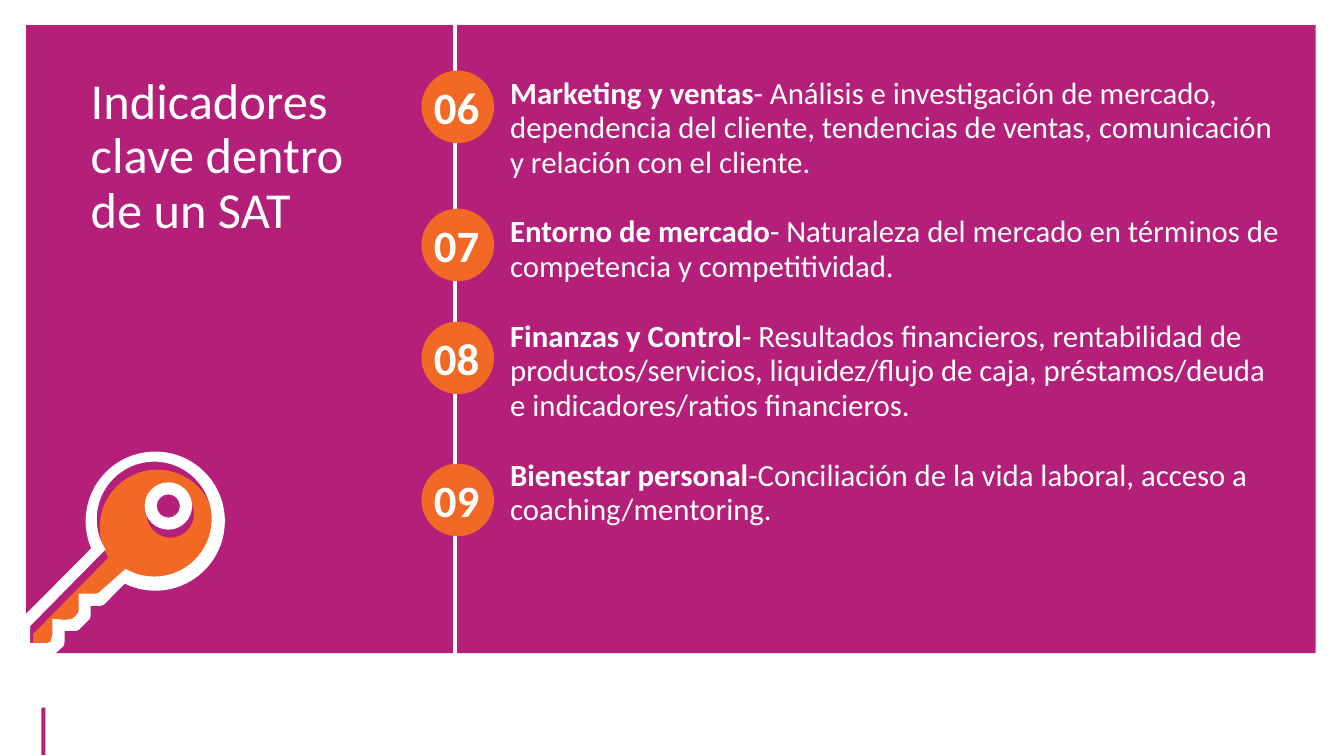
import math
from itertools import pairwise

from lxml import etree
from pptx import Presentation
from pptx import util as u
from pptx.dml import color
from pptx.enum import shapes, text
from pptx.oxml import ns

PX = 9144
FINE = 36
WHITE, MAGENTA, ORANGE = "FFFFFF", "B41F7A", "F16924"
FONT = "Calibri"

INDICATORS = [
    ("06", 70, "Marketing y ventas",
     "- Análisis e investigación de mercado, dependencia del cliente, "
     "tendencias de ventas, comunicación y relación con el cliente."),
    ("07", 207, "Entorno de mercado",
     "- Naturaleza del mercado en términos de competencia y competitividad."),
    ("08", 319, "Finanzas y Control",
     "- Resultados financieros, rentabilidad de productos/servicios, "
     "liquidez/flujo de caja, préstamos/deuda e indicadores/ratios financieros."),
    ("09", 460, "Bienestar personal",
     "-Conciliación de la vida laboral, acceso a coaching/mentoring."),
]


def px(n):
    return u.Emu(n * PX)


def rgb(value):
    return color.RGBColor.from_string(value)


def paint(sp, fill):
    sp.shadow.inherit = False
    sp.fill.solid()
    sp.fill.fore_color.rgb = rgb(fill)
    sp.line.fill.background()
    return sp


def add_preset(s, kind, x, y, w, h, fill):
    return paint(s.shapes.add_shape(kind, px(x), px(y), px(w), px(h)), fill)


def polar(cx, cy, radius, degrees):
    a = math.radians(degrees)
    return cx + radius * math.cos(a), cy + radius * math.sin(a)


def arc(cx, cy, radius, start=0, end=360):
    stops = [start, *(q for q in range(0, 540, 90) if start < q < end), end]
    nodes = [polar(cx, cy, radius, start)]
    for a, b in pairwise(stops):
        reach = radius * math.hypot(1, 4 / 3 * math.tan(math.radians(b - a) / 4))
        lean = math.degrees(math.acos(radius / reach))
        nodes.append((*polar(cx, cy, reach, a + lean),
                      *polar(cx, cy, reach, b - lean),
                      *polar(cx, cy, radius, b)))
    return nodes


def add_outline(s, fill, *contours):
    scaled = [[tuple(v * FINE for v in node) for node in c] for c in contours]
    ends = [[node[-2:] for node in c] for c in scaled]
    builder = s.shapes.build_freeform(*ends[0][0], scale=PX / FINE)
    builder.add_line_segments(ends[0][1:], close=True)
    for contour in ends[1:]:
        builder.move_to(*contour[0])
        builder.add_line_segments(contour[1:], close=True)
    sp = paint(builder.convert_to_shape(), fill)
    left = min(x for c in ends for x, _ in c)
    top = min(y for c in ends for _, y in c)
    segments = list(sp._element.iter(ns.qn("a:lnTo")))
    nodes = [node for c in scaled for node in c[1:]]
    for segment, node in zip(segments, nodes):
        if len(node) == 6:
            curve = etree.Element(ns.qn("a:cubicBezTo"))
            for x, y in zip(node[::2], node[1::2]):
                etree.SubElement(curve, ns.qn("a:pt"),
                                 x=str(round(x - left)), y=str(round(y - top)))
            segment.getparent().replace(segment, curve)


def add_line(s, x1, y1, x2, y2, stroke, width):
    line = s.shapes.add_connector(
        shapes.MSO_CONNECTOR.STRAIGHT, px(x1), px(y1), px(x2), px(y2))
    line.line.color.rgb = rgb(stroke)
    line.line.width = u.Pt(width)
    etree.SubElement(line._element.spPr, ns.qn("a:effectLst"))


def add_run(p, content, size, bold=False, fill=WHITE):
    r = p.add_run()
    r.text = content
    r.font.name = FONT
    r.font.size = u.Pt(size)
    r.font.bold = bold
    r.font.color.rgb = rgb(fill)


def set_frame(tf, left=10):
    tf.margin_left, tf.margin_right = px(left), px(10)
    tf.margin_top = tf.margin_bottom = px(5)
    tf.vertical_anchor = text.MSO_ANCHOR.TOP
    tf.word_wrap = True
    tf.auto_size = text.MSO_AUTO_SIZE.NONE
    return tf


def add_frame(s, x, y, w, h, left=10):
    box = s.shapes.add_textbox(px(x), px(y), px(w), px(h))
    return set_frame(box.text_frame, left)


def add_title(s, content):
    title = s.shapes.title
    title.left, title.top, title.width, title.height = px(80), px(70), px(312), px(305)
    s.shapes._spTree.append(title._element)
    p = set_frame(title.text_frame).paragraphs[0]
    p.alignment = text.PP_ALIGN.LEFT
    p.line_spacing = 0.9
    add_run(p, content, size=36)


def add_descriptions(s):
    tf = add_frame(s, 451, 70, 828, 680, left=55)
    for i, (_, _, name, detail) in enumerate(INDICATORS):
        p = tf.add_paragraph() if i else tf.paragraphs[0]
        p.line_spacing = u.Pt(24.8)
        p.space_before = u.Pt(24.8 if i else 0)
        add_run(p, name, size=22, bold=True)
        add_run(p, detail, size=22)


def add_badge(s, number, y):
    add_preset(s, shapes.MSO_SHAPE.OVAL, 418, y, 72, 72, ORANGE)
    p = add_frame(s, 416, y + 4, 74, 64).paragraphs[0]
    p.alignment = text.PP_ALIGN.CENTER
    add_run(p, number, size=32, bold=True)


def add_key(s):
    border = [(19, 616), *arc(154, 517, 69, 157, 476), (103, 600), (100, 601),
              (90, 601), (90, 611), (89, 614), (78, 625), (75, 626), (64, 626),
              (64, 637), (63, 641), (53, 650), (19, 650)]
    blade = [(30, 638), (30, 621), *arc(153, 515, 57, 148, 480), (98, 588), (95, 589),
             (78, 589), (78, 606), (77, 609), (72, 614), (64, 615), (52, 614),
             (52, 630), (50, 637), (46, 638)]
    shifted = [tuple(v + (8 if i % 2 else 3) for i, v in enumerate(node))
               for node in blade]
    add_outline(s, ORANGE, shifted, arc(169, 510, 23.5))
    add_outline(s, WHITE, border, blade)
    add_outline(s, WHITE, arc(167, 502, 23.5), arc(167, 502, 11.5))


def main():
    prs = Presentation()
    prs.slide_width, prs.slide_height = px(1333), px(750)
    s = prs.slides.add_slide(prs.slide_layouts[5])
    add_preset(s, shapes.MSO_SHAPE.RECTANGLE, 26, 25, 1279, 623, MAGENTA)
    add_preset(s, shapes.MSO_SHAPE.RECTANGLE, 41, 702, 4, 47, MAGENTA)
    add_title(s, "Indicadores clave dentro de un SAT")
    add_descriptions(s)
    add_line(s, 451, 22, 451, 649, WHITE, 3)
    for number, y, _, _ in INDICATORS:
        add_badge(s, number, y)
    add_key(s)
    prs.save("out.pptx")


if __name__ == "__main__":
    main()
